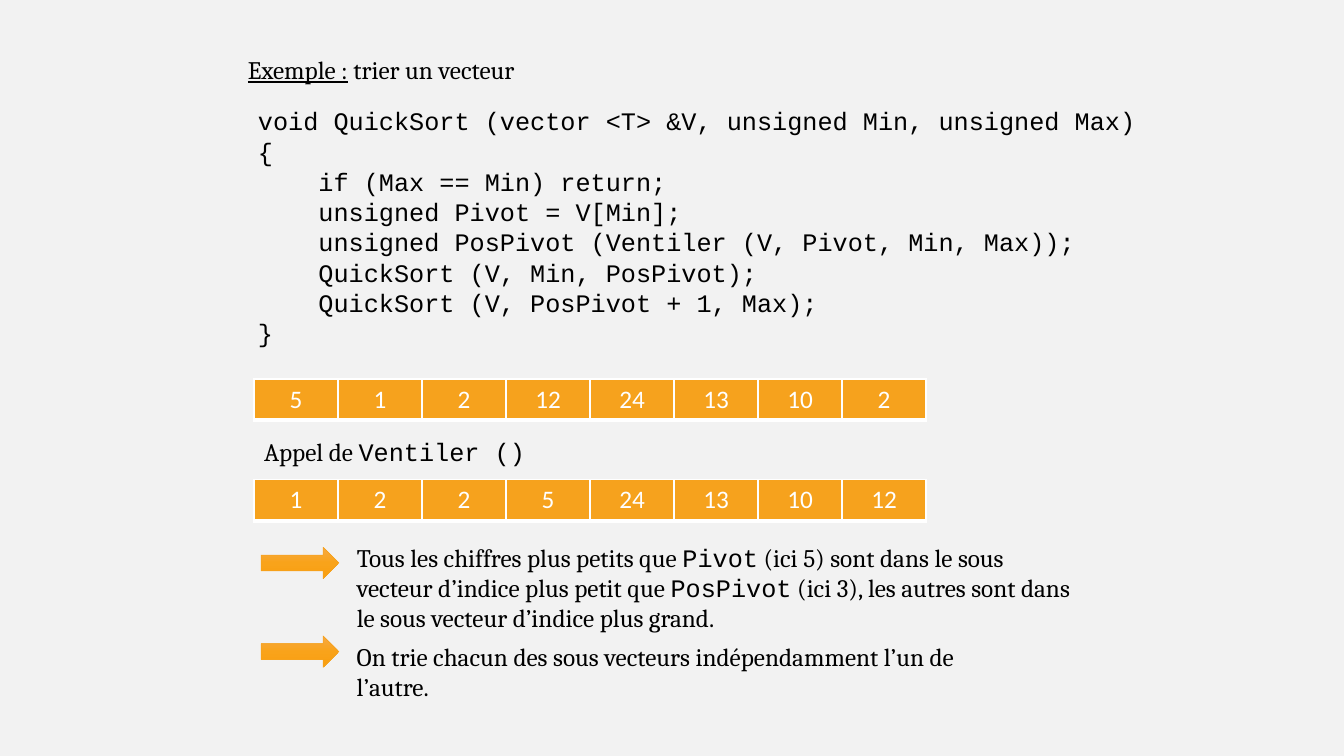
from dataclasses import dataclass

from lxml.etree import SubElement
from pptx import Presentation
from pptx.dml.color import RGBColor
from pptx.enum.shapes import MSO_SHAPE as Shape
from pptx.enum.text import MSO_AUTO_SIZE as AutoSize, PP_ALIGN as Align
from pptx.oxml.ns import qn
from pptx.util import Inches, Pt


@dataclass(frozen=True)
class Theme:
    background: str = "F2F2F2"
    ink: str = "000000"
    light: str = "FFFFFF"
    accent: str = "F6A21D"
    gradient: tuple = ((0, "F7A942"), (50, "F9A31A"), (100, "F99E0F"))
    serif: str = "Cambria"
    mono: str = "Courier New"
    sans: str = "Calibri"
    size: int = 18


THEME = Theme()
SERIF, MONO = {"font": THEME.serif}, {"font": THEME.mono}

# A paragraph is a list of (text, format) runs.
HEADING = [("Exemple :", SERIF | {"underline": True}), (" trier un vecteur", SERIF)]
CODE = [  # (indent level, line)
    (0, "void QuickSort (vector <T> &V, unsigned Min, unsigned Max)"),
    (0, "{"),
    (1, "if (Max == Min) return;"),
    (1, "unsigned Pivot = V[Min];"),
    (1, "unsigned PosPivot (Ventiler (V, Pivot, Min, Max));"),
    (1, "QuickSort (V, Min, PosPivot);"),
    (1, "QuickSort (V, PosPivot + 1, Max);"),
    (0, "}"),
]
CALL = [("Appel de ", SERIF), ("Ventiler ()", MONO)]
VECTORS = [
    (5, 1, 2, 12, 24, 13, 10, 2),
    (1, 2, 2, 5, 24, 13, 10, 12),
]
SPLIT_NOTE = [
    ("Tous les chiffres plus petits que ", SERIF),
    ("Pivot", MONO),
    (" (ici 5) sont dans le sous vecteur d’indice plus petit que ", SERIF),
    ("PosPivot", MONO),
    (" (ici 3), les autres sont dans le sous vecteur d’indice plus grand.", SERIF),
]
SORT_NOTE = [("On trie chacun des sous vecteurs indépendamment l’un de l’autre.", SERIF)]

# Layout, in inches
SLIDE_W, SLIDE_H = 13.33, 7.5
VECTOR_LEFT, VECTOR_TOP, VECTOR_STEP = 2.52, 3.76, 1.0
VECTOR_W, VECTOR_H = SLIDE_W / 2, 0.41
ARROW_LEFT, ARROW_W, ARROW_H = 2.59, 0.77, 0.31
NOTE_LEFT = 3.44
CODE_INDENT = 4 * 0.15  # four monospaced characters
NOTES = [  # (arrow top, text top, width, height, runs)
    (5.43, 5.33, 7.32, 1.01, SPLIT_NOTE),
    (6.31, 6.31, 6.64, 0.71, SORT_NOTE),
]


def color(code):
    return RGBColor.from_string(code)


def write(para, text, font=THEME.serif, ink=THEME.ink, underline=False):
    span = para.add_run()
    span.text = text
    span.font.name = font
    span.font.size = Pt(THEME.size)
    span.font.color.rgb = color(ink)
    if underline:
        span.font.underline = True


def add_text(page, left, top, width, height, paragraphs):
    """Add a wrapping box; paragraphs are (indent level, runs) pairs."""
    box = page.shapes.add_textbox(*map(Inches, (left, top, width, height)))
    frame = box.text_frame
    frame.word_wrap = True
    frame.auto_size = AutoSize.SHAPE_TO_FIT_TEXT
    for number, (level, runs) in enumerate(paragraphs):
        para = frame.add_paragraph() if number else frame.paragraphs[0]
        if level:
            props = para._p.get_or_add_pPr()
            props.set("marL", str(Inches(level * CODE_INDENT)))
            props.set("indent", "0")
        for text, style in runs:
            write(para, text, **style)


def fill_stops(parent, stops):
    for position, code in stops:
        stop = SubElement(parent, qn("a:gs"), pos=str(position * 1000))
        SubElement(stop, qn("a:srgbClr"), val=code)


def border(cell):
    """Draw thin white cell sides and a thick white bottom edge."""
    props = cell._tc.get_or_add_tcPr()
    for place, (side, points) in enumerate((("L", 1), ("R", 1), ("T", 1), ("B", 3))):
        line = SubElement(props, qn(f"a:ln{side}"), w=str(Pt(points)))
        fill = SubElement(line, qn("a:solidFill"))
        SubElement(fill, qn("a:srgbClr"), val=THEME.light)
        props.insert(place, line)


def add_vector(page, top, values):
    frame = page.shapes.add_table(
        1, len(values), *map(Inches, (VECTOR_LEFT, top, VECTOR_W, VECTOR_H)))
    table = frame.table
    for column, value in enumerate(values):
        table.columns[column].width = Inches(VECTOR_W / len(values))
        cell = table.cell(0, column)
        cell.fill.solid()
        cell.fill.fore_color.rgb = color(THEME.accent)
        border(cell)
        para = cell.text_frame.paragraphs[0]
        para.alignment = Align.CENTER
        write(para, str(value), font=THEME.sans, ink=THEME.light)


def add_arrow(page, top):
    arrow = page.shapes.add_shape(
        Shape.RIGHT_ARROW, *map(Inches, (ARROW_LEFT, top, ARROW_W, ARROW_H)))
    arrow.shadow.inherit = False
    arrow.fill.gradient()
    arrow.fill.gradient_angle = 270  # counter-clockwise: runs top to bottom
    stops = arrow._element.spPr.find(qn("a:gradFill")).find(qn("a:gsLst"))
    for stop in list(stops):
        stops.remove(stop)
    fill_stops(stops, THEME.gradient)
    arrow.line.color.rgb = color(THEME.accent)
    arrow.line.width = Pt(0.5)


def main():
    deck = Presentation()
    deck.slide_width, deck.slide_height = Inches(SLIDE_W), Inches(SLIDE_H)
    page = deck.slides.add_slide(deck.slide_layouts[6])
    page.background.fill.solid()
    page.background.fill.fore_color.rgb = color(THEME.background)

    add_text(page, 2.36, 0.49, 6.82, 0.4, [(0, HEADING)])
    add_text(page, 2.46, 1, 9.04, 2.52,
             [(level, [(line, MONO)]) for level, line in CODE])
    for row, values in enumerate(VECTORS):
        add_vector(page, VECTOR_TOP + row * VECTOR_STEP, values)
    add_text(page, VECTOR_LEFT, 4.28, 4.51, 0.4, [(0, CALL)])
    for arrow_top, top, width, height, runs in NOTES:
        add_arrow(page, arrow_top)
        add_text(page, NOTE_LEFT, top, width, height, [(0, runs)])

    deck.save("out.pptx")


if __name__ == "__main__":
    main()
